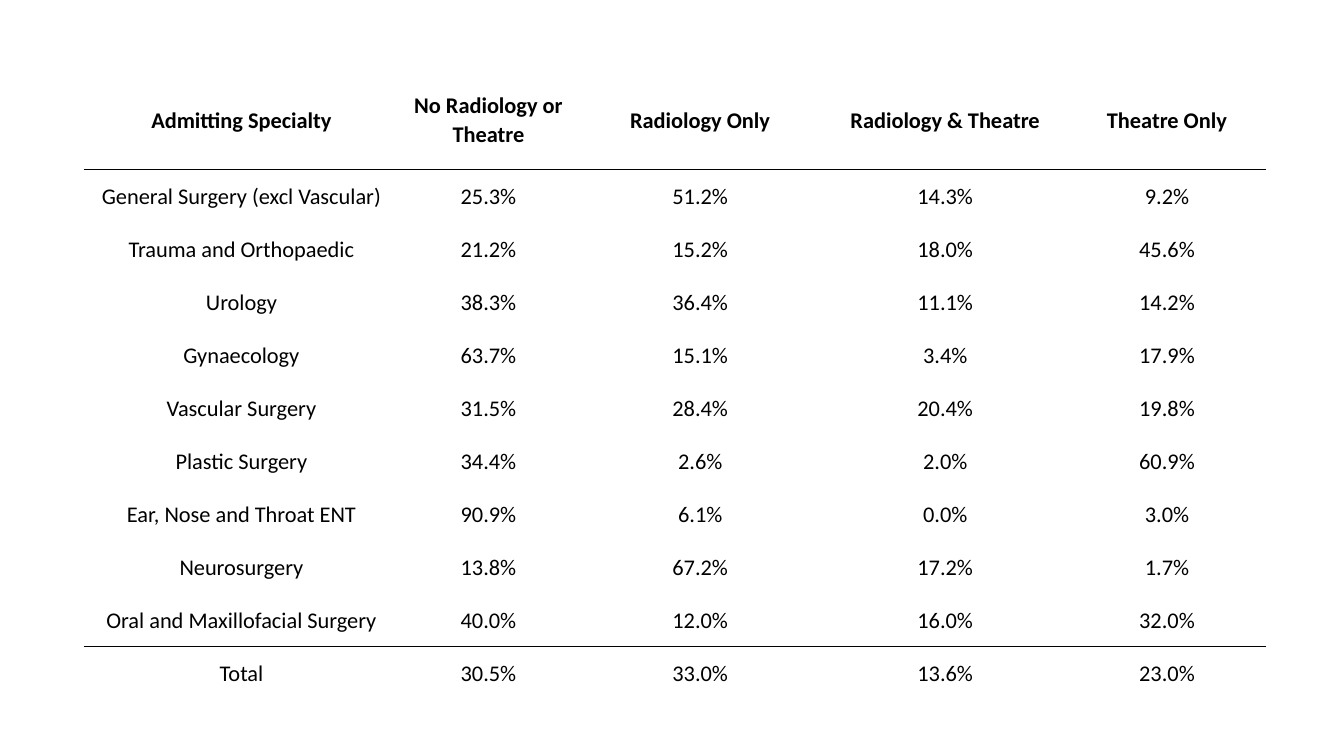
from lxml import etree
from pptx import Presentation
from pptx.dml.color import RGBColor
from pptx.enum.text import MSO_ANCHOR, PP_ALIGN
from pptx.oxml.ns import qn
from pptx.util import Inches, Pt

BLACK = RGBColor(0, 0, 0)
CENTER = PP_ALIGN.CENTER
MIDDLE = MSO_ANCHOR.MIDDLE
FONT = "Calibri"

LEFT, TOP, WIDTH, HEIGHT = 0.83, 0.69, 11.71, 6.25
COLS = [3.13, 1.77, 2.43, 2.43, 1.97]
HEAD = 0.99
RULES = [1, 10]

DATA = [
    ["Admitting Specialty", "No Radiology or Theatre", "Radiology Only",
     "Radiology & Theatre", "Theatre Only"],
    ["General Surgery (excl Vascular)", "25.3%", "51.2%", "14.3%", "9.2%"],
    ["Trauma and Orthopaedic", "21.2%", "15.2%", "18.0%", "45.6%"],
    ["Urology", "38.3%", "36.4%", "11.1%", "14.2%"],
    ["Gynaecology", "63.7%", "15.1%", "3.4%", "17.9%"],
    ["Vascular Surgery", "31.5%", "28.4%", "20.4%", "19.8%"],
    ["Plastic Surgery", "34.4%", "2.6%", "2.0%", "60.9%"],
    ["Ear, Nose and Throat ENT", "90.9%", "6.1%", "0.0%", "3.0%"],
    ["Neurosurgery", "13.8%", "67.2%", "17.2%", "1.7%"],
    ["Oral and Maxillofacial Surgery", "40.0%", "12.0%", "16.0%", "32.0%"],
    ["Total", "30.5%", "33.0%", "13.6%", "23.0%"],
]


def add_edge(cell, side, shown):
    props = cell._tc.get_or_add_tcPr()
    edge = etree.SubElement(props, qn(f"a:ln{side}"), w=str(Pt(1)))
    if shown:
        fill = etree.SubElement(edge, qn("a:solidFill"))
        etree.SubElement(fill, qn("a:srgbClr"), val=str(BLACK))
    else:
        etree.SubElement(edge, qn("a:noFill"))


def add_text(cell, text, bold):
    cell.vertical_anchor = MIDDLE
    cell.margin_left = cell.margin_right = Inches(0.07)
    cell.margin_top = cell.margin_bottom = 0
    para = cell.text_frame.paragraphs[0]
    para.alignment = CENTER
    para.line_spacing = 1.07
    para.space_after = Pt(8)
    run = para.add_run()
    run.text = text
    run.font.name = FONT
    run.font.size = Pt(16)
    run.font.bold = bold
    run.font.color.rgb = BLACK


def fill_cell(cell, text, row):
    add_text(cell, text, row == 0)
    add_edge(cell, "L", False)
    add_edge(cell, "R", False)
    add_edge(cell, "T", row in RULES)
    add_edge(cell, "B", row + 1 in RULES)
    cell.fill.background()


def add_grid(slide):
    frame = slide.shapes.add_table(
        len(DATA), len(COLS),
        Inches(LEFT), Inches(TOP), Inches(WIDTH), Inches(HEIGHT))
    table = frame.table
    table.first_row = False
    table.horz_banding = False
    for col, width in zip(table.columns, COLS):
        col.width = Inches(width)
    body = (HEIGHT - HEAD) / (len(DATA) - 1)
    for row, texts in enumerate(DATA):
        table.rows[row].height = Inches(body if row else HEAD)
        for col, text in enumerate(texts):
            fill_cell(table.cell(row, col), text, row)


def main():
    deck = Presentation()
    deck.slide_width = Inches(13.33)
    deck.slide_height = Inches(7.5)
    slide = deck.slides.add_slide(deck.slide_layouts[6])
    add_grid(slide)
    deck.save("out.pptx")


if __name__ == "__main__":
    main()
